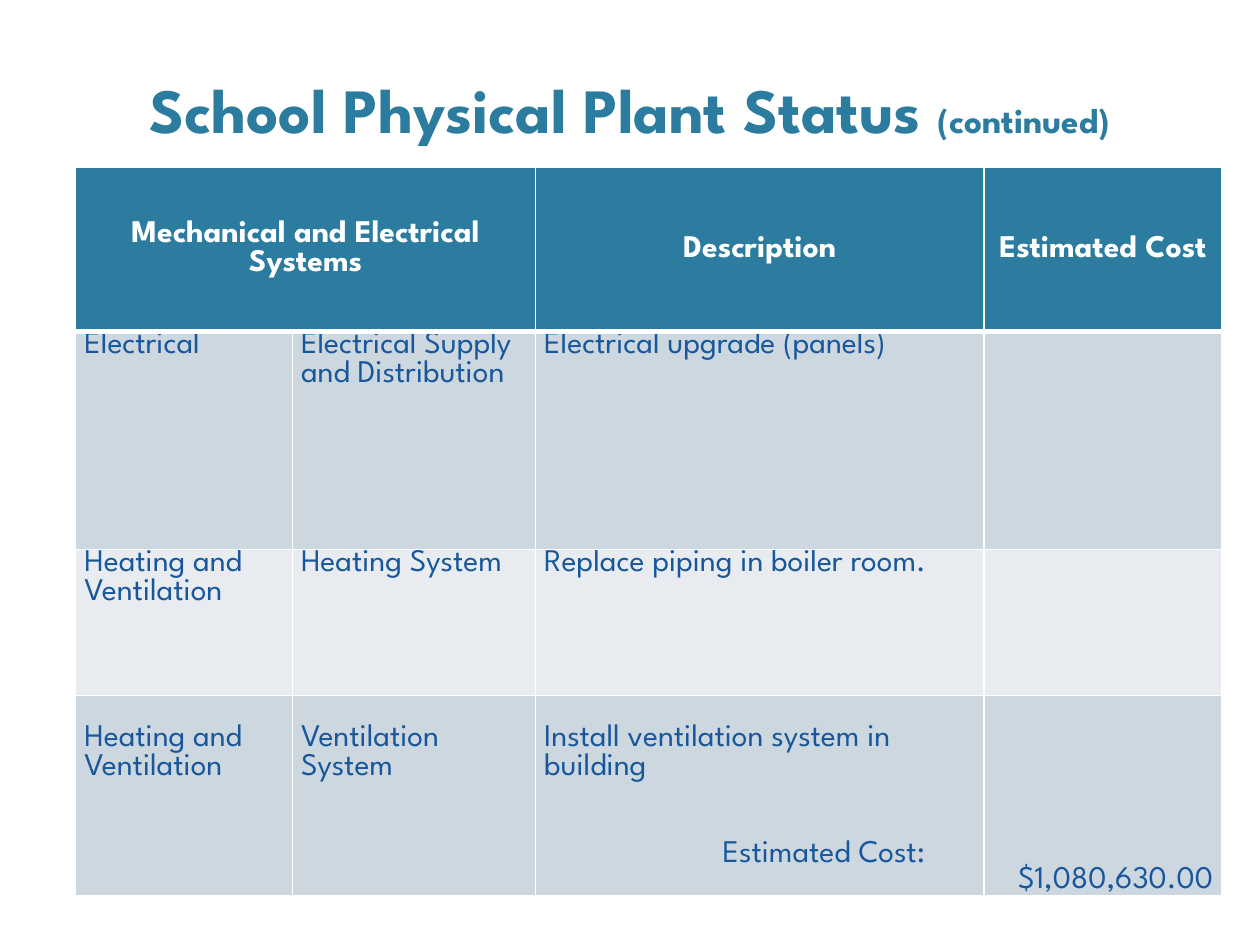
from lxml.etree import SubElement
from pptx import Presentation
from pptx.dml.color import RGBColor
from pptx.enum.text import MSO_ANCHOR, PP_ALIGN
from pptx.oxml.ns import qn
from pptx.util import Pt

COLORS = {
    "white": "FFFFFF",
    "teal": "2C7C9F",
    "blue": "18579B",
    "band_dark": "CDD7DF",
    "band_light": "E8ECF0",
}
LINE = 16.56  # height of one 18 pt line
COLUMNS = [123.84, 138.96, 256.32, 136.08]
ROWS = [93.6, 124.56, 83.52, 6 * LINE]
HEADERS = {0: "Mechanical and Electrical Systems", 2: "Description", 3: "Estimated Cost"}
BODY = [
    ["Electrical", "Electrical Supply and Distribution", "Electrical upgrade (panels)", ""],
    ["Heating and Ventilation", "Heating System", "Replace piping in boiler room.", ""],
    ["Heating and Ventilation", "Ventilation System",
     "Install ventilation system in building", "$1,080,630.00"],
]


def rgb(name):
    return RGBColor.from_string(COLORS[name])


class Deck:
    font = "League Spartan"

    def __init__(self, slide):
        self.slide = slide

    def style(self, p, color, size=18, bold=False, align=PP_ALIGN.LEFT):
        p.alignment = align
        p.font.name = self.font
        p.font.size = Pt(size)
        p.font.bold = bold
        p.font.color.rgb = rgb(color)

    def title(self, text, suffix, left, top, width, height):
        tf = self.slide.shapes.add_textbox(Pt(left), Pt(top), Pt(width), Pt(height)).text_frame
        tf.word_wrap = True
        tf.vertical_anchor = MSO_ANCHOR.BOTTOM
        p = tf.paragraphs[0]
        self.style(p, "teal", 36, True, PP_ALIGN.CENTER)
        p.add_run().text = text
        r = p.add_run()
        r.text = suffix
        r.font.size = Pt(20)

    def table(self, left, top, columns, rows):
        frame = self.slide.shapes.add_table(
            len(rows), len(columns), Pt(left), Pt(top), Pt(sum(columns)), Pt(sum(rows)))
        table = frame.table
        table.first_row = table.horz_banding = False
        for column, width in zip(table.columns, columns):
            column.width = Pt(width)
        for row, height in zip(table.rows, rows):
            row.height = Pt(height)
        return table

    def borders(self, cell, top=1, bottom=1):
        tc_pr = cell._tc.get_or_add_tcPr()
        for i, (side, width) in enumerate(zip("LRTB", (1, 1, top, bottom))):
            ln = SubElement(tc_pr, qn(f"a:ln{side}"), w=str(Pt(width)))
            fill = SubElement(ln, qn("a:solidFill"))
            SubElement(fill, qn("a:srgbClr"), val=COLORS["white"])
            tc_pr.insert(i, ln)

    def cell(self, cell, text, fill, color, top=1, bottom=1, **font):
        cell.margin_left = cell.margin_right = Pt(5.04)
        cell.margin_top = cell.margin_bottom = 0
        cell.fill.solid()
        cell.fill.fore_color.rgb = rgb(fill)
        self.borders(cell, top, bottom)
        cell.text = text
        self.style(cell.text_frame.paragraphs[0], color, **font)


def main():
    prs = Presentation()
    prs.slide_width, prs.slide_height = Pt(720), Pt(540)
    deck = Deck(prs.slides.add_slide(prs.slide_layouts[6]))
    deck.title("School Physical Plant Status ", "(continued)", 43.2, 33.84, 633.6, 53.28)

    table = deck.table(43.2, 95.76, COLUMNS, ROWS)
    table.cell(0, 0).merge(table.cell(0, 1))
    for col in range(len(COLUMNS)):
        cell = table.cell(0, col)
        deck.cell(cell, HEADERS.get(col, ""), "teal", "white", bottom=3,
                  bold=True, align=PP_ALIGN.CENTER)
        cell.vertical_anchor = MSO_ANCHOR.MIDDLE
    for row, texts in enumerate(BODY, start=1):
        fill = "band_dark" if row % 2 else "band_light"
        for col, text in enumerate(texts):
            deck.cell(table.cell(row, col), text, fill, "blue", top=3 if row == 1 else 1,
                      align=PP_ALIGN.RIGHT if col == 3 else PP_ALIGN.LEFT)

    last = len(BODY)
    for col in range(3):
        table.cell(last, col).margin_top = Pt(LINE)
    table.cell(last, 3).vertical_anchor = MSO_ANCHOR.BOTTOM
    p = table.cell(last, 2).text_frame.add_paragraph()
    p.text = "Estimated Cost:"
    deck.style(p, "blue")
    p.space_before = Pt(2 * LINE)
    p._p.get_or_add_pPr().set("marL", str(Pt(102)))

    prs.save("out.pptx")


if __name__ == "__main__":
    main()
